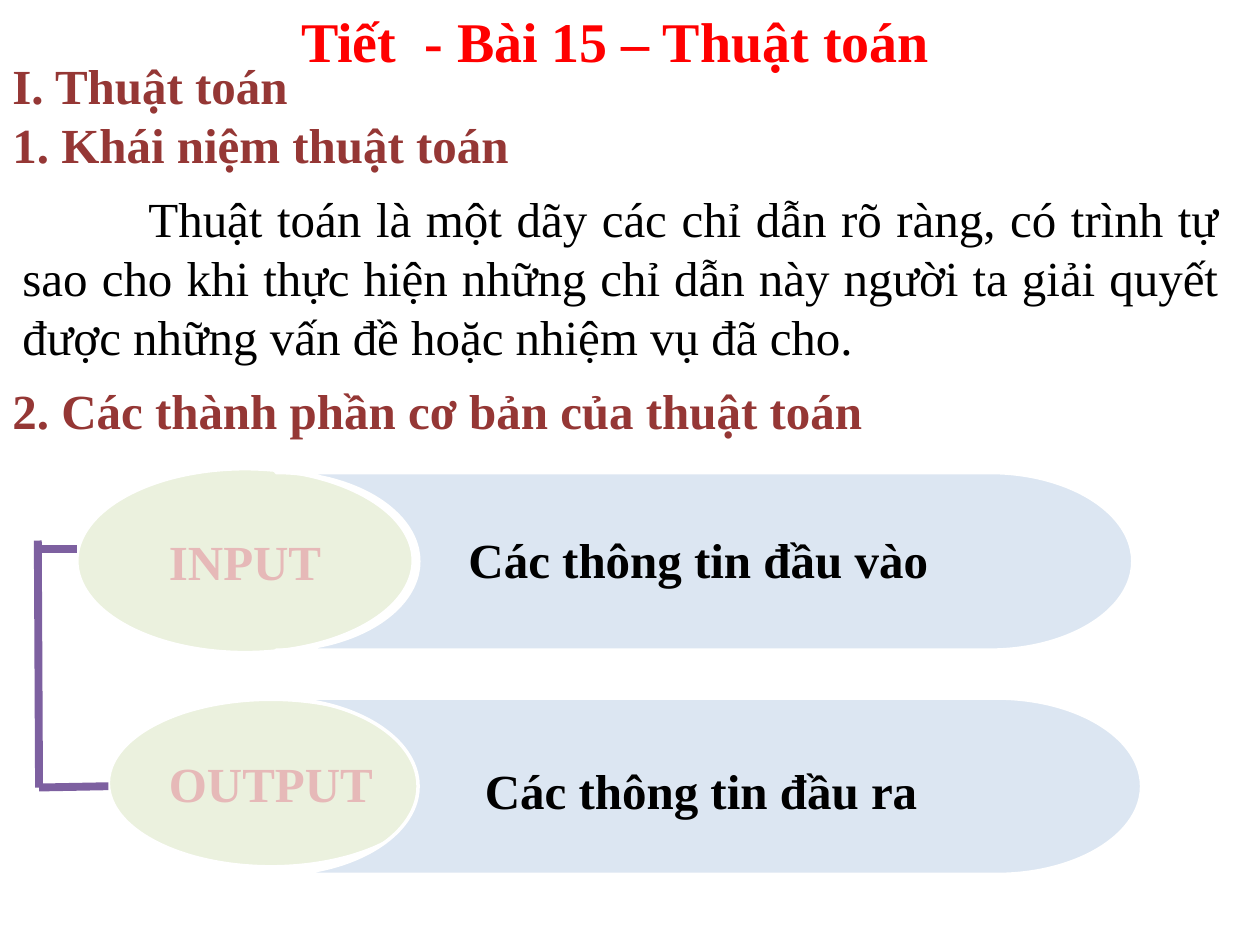
from dataclasses import dataclass

from lxml.etree import SubElement
from pptx import Presentation
from pptx.dml.color import RGBColor
from pptx.enum.shapes import MSO_CONNECTOR, MSO_SHAPE
from pptx.enum.text import MSO_ANCHOR, MSO_AUTO_SIZE, PP_ALIGN
from pptx.oxml.ns import qn
from pptx.util import Inches, Pt

FONT = "Times New Roman"
BLACK, WHITE, RED, BROWN = "000000", "FFFFFF", "FF0000", "953735"
GREEN, BLUE, PINK, PURPLE = "EBF1DE", "DCE6F2", "E6B9B8", "7D60A0"


@dataclass
class Box:
    left: float
    top: float
    width: float
    height: float

    def lengths(self) -> list:
        return [Inches(n) for n in (self.left, self.top, self.width, self.height)]


@dataclass
class TextStyle:
    color: str = BLACK
    size: float = 28
    bold: bool = True
    align: PP_ALIGN = PP_ALIGN.LEFT
    margin: float = 0
    indent: float = 0
    outline: str = ""
    outline_width: float = 0


@dataclass
class Component:
    name: str
    description: str
    oval: Box
    band: Box
    label: Box


HEADING = TextStyle(BROWN, margin=0.5, indent=-0.5)
TITLE = TextStyle(RED, 32, align=PP_ALIGN.CENTER, outline="D73A36", outline_width=1.42)
DEFINITION = TextStyle(bold=False, align=PP_ALIGN.JUSTIFY, indent=1)
NAME = TextStyle(PINK, align=PP_ALIGN.CENTER, outline="C0504D", outline_width=1.75)

COMPONENTS = [
    Component("INPUT", "Các thông tin đầu vào", Box(0.61, 3.72, 2.67, 1.46),
              Box(2.19, 3.75, 6.8, 1.41), Box(3.62, 4.15, 4.97, 0.57)),
    Component("OUTPUT", "Các thông tin đầu ra", Box(0.86, 5.55, 2.58, 1.33),
              Box(2.17, 5.54, 6.89, 1.4), Box(3.75, 5.99, 5, 0.57)),
]
BRACKET = [((0.3, 4.29), (0.31, 6.25)),
           ((0.31, 4.36), (0.61, 4.36)),
           ((0.31, 6.25), (0.86, 6.24))]


def rgb(value: str) -> RGBColor:
    return RGBColor.from_string(value)


def write(shape, text: str, style: TextStyle) -> None:
    frame = shape.text_frame
    frame.word_wrap = True
    frame.text = text
    for paragraph in frame.paragraphs:
        paragraph.alignment = style.align
        properties = paragraph._p.get_or_add_pPr()
        properties.set("marL", str(Inches(style.margin)))
        properties.set("indent", str(Inches(style.indent)))
        for run in paragraph.runs:
            font = run.font
            font.name, font.size, font.bold = FONT, Pt(style.size), style.bold
            font.color.rgb = rgb(style.color)
            if style.outline:
                add_outline(run, style)


def add_outline(run, style: TextStyle) -> None:
    properties = run._r.get_or_add_rPr()
    line = SubElement(properties, qn("a:ln"), w=str(Pt(style.outline_width)))
    fill = SubElement(line, qn("a:solidFill"))
    SubElement(fill, qn("a:srgbClr"), val=style.outline)
    properties.insert(0, line)


def add_text(slide, box: Box, text: str, style: TextStyle):
    shape = slide.shapes.add_textbox(*box.lengths())
    write(shape, text, style)
    shape.text_frame.auto_size = MSO_AUTO_SIZE.SHAPE_TO_FIT_TEXT
    return shape


def add_filled(slide, kind: MSO_SHAPE, box: Box, fill: str):
    shape = slide.shapes.add_shape(kind, *box.lengths())
    shape.shadow.inherit = False
    shape.fill.solid()
    shape.fill.fore_color.rgb = rgb(fill)
    shape.line.color.rgb = rgb(WHITE)
    shape.line.width = Pt(2)
    return shape


def add_line(slide, start: tuple[float, float], end: tuple[float, float]) -> None:
    points = [Inches(n) for n in (*start, *end)]
    connector = slide.shapes.add_connector(MSO_CONNECTOR.STRAIGHT, *points)
    connector.line.color.rgb = rgb(PURPLE)
    connector.line.width = Pt(4.5)
    SubElement(connector._element.spPr, qn("a:effectLst"))


def main() -> None:
    presentation = Presentation()
    presentation.slide_width, presentation.slide_height = Inches(10), Inches(7.5)
    slide = presentation.slides.add_slide(presentation.slide_layouts[6])

    # Headings and definition
    add_text(slide, Box(0, 0.39, 5.78, 1.04),
             "I. Thuật toán\n1. Khái niệm thuật toán", HEADING)
    title = add_text(slide, Box(2.27, 0, 5.23, 0.64),
                     "Tiết  - Bài 15 – Thuật toán", TITLE)
    title.text_frame.word_wrap = False
    definition = add_text(
        slide, Box(0.08, 1.45, 9.69, 1.51),
        "Thuật toán là một dãy các chỉ dẫn rõ ràng, có trình tự sao cho khi "
        "thực hiện những chỉ dẫn này người ta giải quyết được những vấn đề "
        "hoặc nhiệm vụ đã cho.", DEFINITION)
    definition.fill.solid()
    definition.fill.fore_color.rgb = rgb(WHITE)
    add_text(slide, Box(0, 2.97, 7.34, 0.57),
             "2. Các thành phần cơ bản của thuật toán", HEADING)

    # Ovals with the component names
    for component in COMPONENTS:
        oval = add_filled(slide, MSO_SHAPE.FLOWCHART_CONNECTOR, component.oval, GREEN)
        write(oval, component.name, NAME)
        oval.text_frame.vertical_anchor = MSO_ANCHOR.MIDDLE

    # Bracket joining the ovals
    for start, end in BRACKET:
        add_line(slide, start, end)

    # Bands, then their descriptions
    for component in COMPONENTS:
        band = add_filled(slide, MSO_SHAPE.FLOWCHART_STORED_DATA, component.band, BLUE)
        band.rotation = 180
    for component in COMPONENTS:
        add_text(slide, component.label, component.description, TextStyle())

    presentation.save("out.pptx")


if __name__ == "__main__":
    main()
